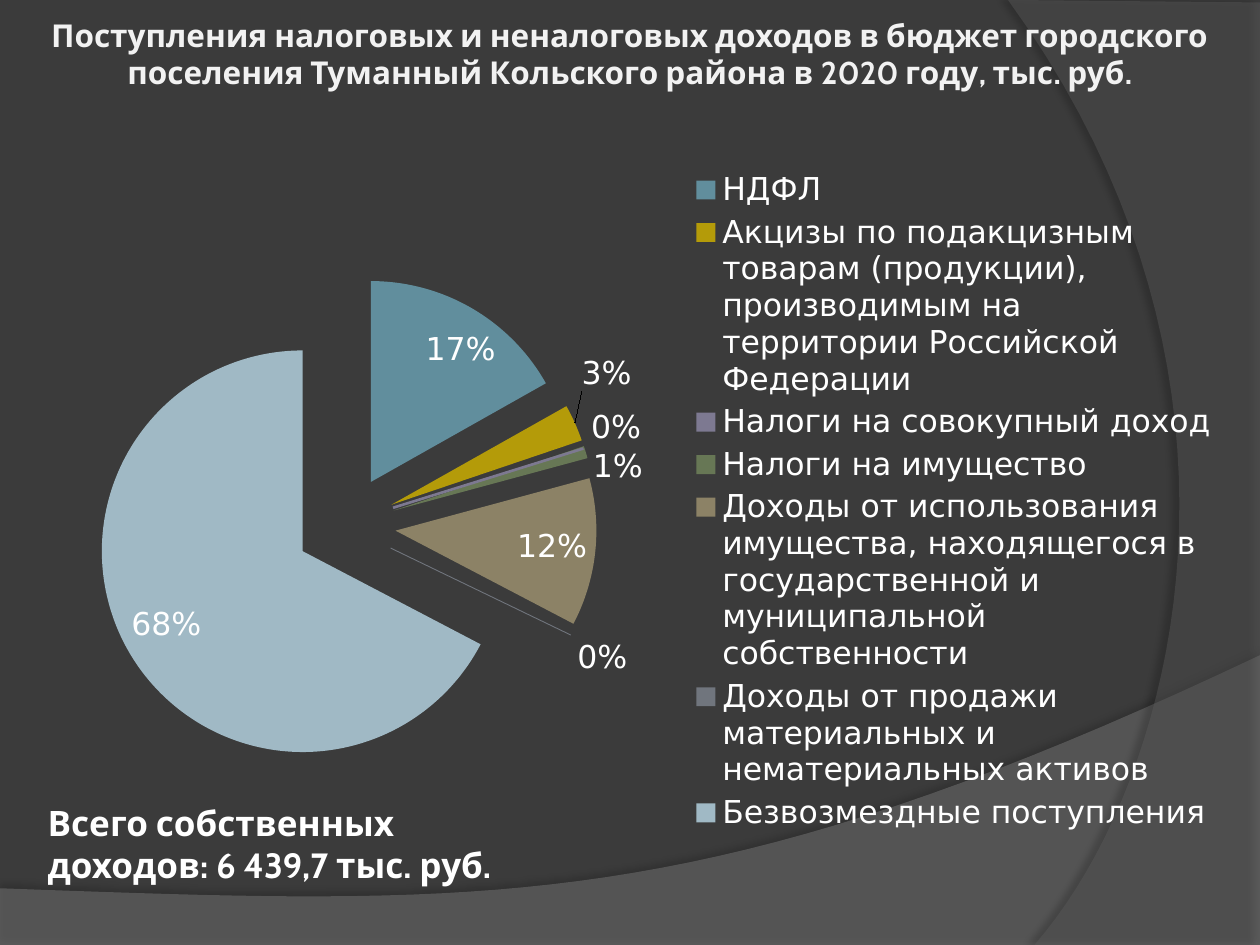
from lxml import etree
from pptx import Presentation
from pptx.chart.data import CategoryChartData
from pptx.dml.color import RGBColor
from pptx.enum.chart import XL_CHART_TYPE as ChartType
from pptx.enum.chart import XL_LABEL_POSITION as LabelPosition
from pptx.enum.chart import XL_LEGEND_POSITION as LegendPosition
from pptx.enum.shapes import MSO_CONNECTOR as Connector
from pptx.enum.text import MSO_ANCHOR as Anchor
from pptx.enum.text import PP_ALIGN as Align
from pptx.oxml import parse_xml
from pptx.oxml.ns import nsdecls, qn
from pptx.util import Inches, Pt

CURVE_STEPS = 40

INCOME = [
    ("НДФЛ", 17, "618E9D"),
    ("Акцизы по подакцизным товарам (продукции), производимым на "
     "территории Российской Федерации", 3, "B49B09"),
    ("Налоги на совокупный доход", 0, "7D7991"),
    ("Налоги на имущество", 1, "677755"),
    ("Доходы от использования имущества, находящегося в государственной "
     "и муниципальной собственности", 12, "8C8266"),
    ("Доходы от продажи материальных и нематериальных активов", 0, "70757D"),
    ("Безвозмездные поступления", 68, "A0B9C5"),
]
# Vertical shift of single labels, as a share of the chart height
LABEL_SHIFTS = {1: -0.04, 3: 0.05}
# Shares that round to zero: slice start, slice end, line width, colour, label centre
SLIVERS = [
    ((3.12, 4.03), (4.63, 3.56), 1.5, "7D7991", (4.89, 3.38)),
    ((3.1, 4.35), (4.53, 5.04), 0.5, "70757D", (4.78, 5.21)),
]


def color(hex_string):
    return RGBColor.from_string(hex_string)


def curve(start, control_1, control_2, end):
    """Points along a cubic Bezier curve, both ends included."""
    points = []
    for step in range(CURVE_STEPS + 1):
        t = step / CURVE_STEPS
        weights = ((1 - t) ** 3, 3 * t * (1 - t) ** 2, 3 * t * t * (1 - t), t ** 3)
        corners = (start, control_1, control_2, end)
        points.append(tuple(sum(w * corner[axis] for w, corner in zip(weights, corners))
                            for axis in (0, 1)))
    return points


def manual_layout(x, y, width, height, inner=False):
    target = '<c:layoutTarget val="inner"/>' if inner else ""
    return parse_xml(
        f'<c:layout {nsdecls("c")}><c:manualLayout>{target}'
        '<c:xMode val="edge"/><c:yMode val="edge"/>'
        f'<c:x val="{x}"/><c:y val="{y}"/><c:w val="{width}"/><c:h val="{height}"/>'
        '</c:manualLayout></c:layout>')


def shifted_label(index, shift):
    return parse_xml(
        f'<c:dLbl {nsdecls("c")}><c:idx val="{index}"/><c:layout><c:manualLayout>'
        f'<c:x val="0"/><c:y val="{shift}"/></c:manualLayout></c:layout>'
        '<c:numFmt formatCode="0&quot;%&quot;" sourceLinked="0"/>'
        '<c:dLblPos val="bestFit"/><c:showLegendKey val="0"/><c:showVal val="1"/>'
        '<c:showCatName val="0"/><c:showSerName val="0"/><c:showPercent val="0"/>'
        '<c:showBubbleSize val="0"/></c:dLbl>')


class SlideBuilder:
    text_font = "Cabin"
    chart_font = "DejaVu Sans"
    white = "FFFFFF"

    def __init__(self, slide):
        self.slide = slide

    def background(self, fill):
        self.slide.background.fill.solid()
        self.slide.background.fill.fore_color.rgb = color(fill)

    def wave(self, points, fill, opacity, shadow_opacity, shadow_distance, shadow_angle):
        corners = [(Inches(x), Inches(y)) for x, y in points]
        builder = self.slide.shapes.build_freeform(*corners[0], scale=1.0)
        builder.add_line_segments(corners[1:], close=True)
        shape = builder.convert_to_shape()
        shape.fill.solid()
        shape.fill.fore_color.rgb = color(fill)
        shape.line.fill.background()
        shape.shadow.inherit = False
        properties = shape._element.spPr
        fill_color = properties.find(qn("a:solidFill"))[0]
        etree.SubElement(fill_color, qn("a:alpha"), val=str(opacity * 1000))
        properties.find(qn("a:effectLst")).append(parse_xml(
            f'<a:outerShdw {nsdecls("a")} blurRad="{Pt(4)}" dist="{Pt(shadow_distance)}" '
            f'dir="{shadow_angle * 60000}" algn="ctr" rotWithShape="0">'
            f'<a:srgbClr val="000000"><a:alpha val="{shadow_opacity * 1000}"/></a:srgbClr>'
            '</a:outerShdw>'))

    def text(self, box, lines, size, font_color, align=Align.LEFT, anchor=Anchor.TOP,
             font_name=text_font, bold=True):
        shape = self.slide.shapes.add_textbox(*(Inches(length) for length in box))
        frame = shape.text_frame
        frame.word_wrap = True
        frame.vertical_anchor = anchor
        frame.text = "\n".join(lines)
        for paragraph in frame.paragraphs:
            paragraph.alignment = align
            font = paragraph.font
            font.name, font.size, font.bold = font_name, Pt(size), bold
            font.color.rgb = color(font_color)

    def sliver(self, start, end, width, line_color, label_center):
        line = self.slide.shapes.add_connector(
            Connector.STRAIGHT, *(Inches(length) for length in start + end))
        line.line.width = Pt(width)
        line.line.color.rgb = color(line_color)
        etree.SubElement(line._element.spPr, qn("a:effectLst"))
        x, y = label_center
        self.text((x - 0.4, y - 0.2, 0.8, 0.4), ["0%"], 18, self.white,
                  Align.CENTER, Anchor.MIDDLE, self.chart_font, False)

    def pie(self, box, rows, size, explosion):
        data = CategoryChartData()
        data.categories = [name for name, _, _ in rows]
        data.add_series("Доходы", [value for _, value, _ in rows])
        chart = self.slide.shapes.add_chart(
            ChartType.PIE, *(Inches(length) for length in box), data).chart
        chart.has_title = False
        chart.font.name, chart.font.size = self.chart_font, Pt(size)
        chart.font.color.rgb = color(self.white)

        # Legend
        chart.has_legend = True
        chart.legend.position = LegendPosition.RIGHT
        chart.legend.include_in_layout = False
        chart.legend._element.find(qn("c:legendPos")).addnext(
            manual_layout(0.55, 0.03, 0.43, 0.96))

        # Plot area
        plot_area = chart._chartSpace.chart.plotArea
        for layout in plot_area.findall(qn("c:layout")):
            plot_area.remove(layout)
        plot_area.insert(0, manual_layout(0, 0.185, 0.517, 0.718, inner=True))
        plot = chart.plots[0]
        plot.vary_by_categories = True

        # Slices
        series = plot.series[0]
        for index, (_, _, fill) in enumerate(rows):
            slice_fill = series.points[index].format.fill
            slice_fill.solid()
            slice_fill.fore_color.rgb = color(fill)
        series._element.find(qn("c:dPt")).addprevious(
            parse_xml(f'<c:explosion {nsdecls("c")} val="{explosion}"/>'))

        # Labels
        labels = series.data_labels
        labels.show_value = True
        labels.number_format, labels.number_format_is_linked = '0"%"', False
        labels.position = LabelPosition.BEST_FIT
        for place, (index, shift) in enumerate(LABEL_SHIFTS.items()):
            labels._element.insert(place, shifted_label(index, shift))


def main():
    presentation = Presentation()
    presentation.slide_width, presentation.slide_height = Inches(10), Inches(7.5)
    builder = SlideBuilder(presentation.slides.add_slide(presentation.slide_layouts[6]))

    # Backdrop
    builder.background("3B3B3B")
    builder.wave(
        [(0, 7.05), (0, 7.51), (10, 7.51)]
        + curve((10, 5.2), (5.59, 7.29), (3.91, 7.19), (0, 7.05))[:-1],
        "7F7F7F", 45, 35, 3.5, 270)
    builder.wave(
        [(10, 0.02), (10, 7.5)] + curve((8.21, 7.5), (9.35, 6.19), (10.18, 3), (8, 0)),
        "5E5E5E", 40, 45, 4, 180)

    # Total and title
    builder.text((0.28, 6.31, 5.51, 0.77),
                 ["Всего собственных", "доходов: 6 439,7 тыс. руб."], 20, "FFFFFF")
    builder.text((0, 0.01, 10, 0.83),
                 ["Поступления налоговых и неналоговых доходов в бюджет городского "
                  "поселения Туманный Кольского района в 2020 году, тыс. руб."],
                 18, "F2F2F2", Align.CENTER, Anchor.MIDDLE)

    # Income by source
    builder.pie((0.28, 1.15, 9.53, 5.55), INCOME, 18, 25)
    for sliver in SLIVERS:
        builder.sliver(*sliver)

    presentation.save("out.pptx")


if __name__ == "__main__":
    main()
